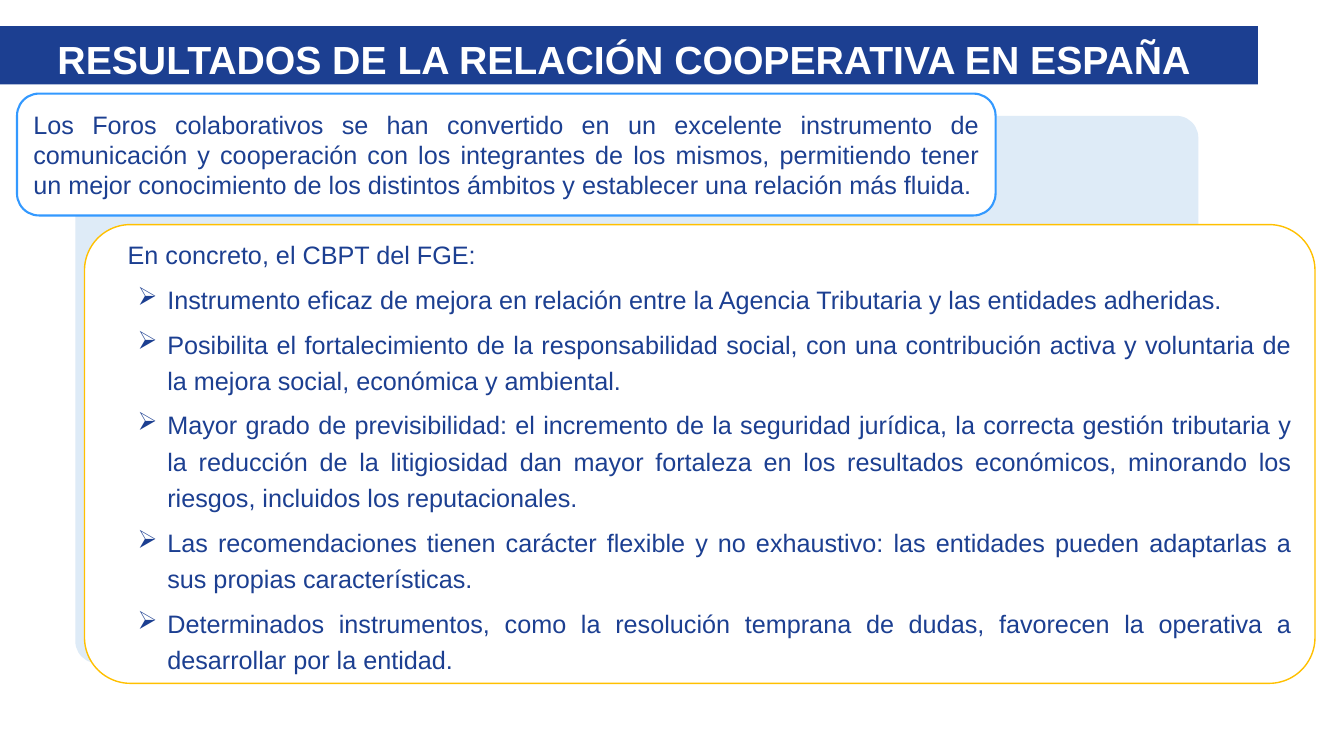
"""Build the slide on the results of the cooperative relationship in Spain."""
from dataclasses import dataclass
from typing import Any, Optional

import pptx
import pptx.dml.color
import pptx.enum.shapes
import pptx.enum.text
import pptx.util
from lxml import etree

Cm = pptx.util.Cm
Pt = pptx.util.Pt
RGBColor = pptx.dml.color.RGBColor
Align = pptx.enum.text.PP_ALIGN
Anchor = pptx.enum.text.MSO_ANCHOR

NAVY = RGBColor(0x1C, 0x3F, 0x91)
WHITE = RGBColor(0xFF, 0xFF, 0xFF)
PALE_BLUE = RGBColor(0xDE, 0xEB, 0xF7)
SKY_BLUE = RGBColor(0x33, 0x99, 0xFF)
AMBER = RGBColor(0xFF, 0xC0, 0x00)

DRAWING_NS = "http://schemas.openxmlformats.org/drawingml/2006/main"

TITLE = "RESULTADOS DE LA RELACIÓN COOPERATIVA EN ESPAÑA"
FORUMS = (
    "Los Foros colaborativos se han convertido en un excelente instrumento de "
    "comunicación y cooperación con los integrantes de los mismos, permitiendo tener "
    "un mejor conocimiento de los distintos ámbitos y establecer una relación más fluida."
)
INTRO = "En concreto, el CBPT del FGE:"
RESULTS = [
    "Instrumento eficaz de mejora en relación entre la Agencia Tributaria y las "
    "entidades adheridas.",
    "Posibilita el fortalecimiento de la responsabilidad social, con una contribución "
    "activa y voluntaria de la mejora social, económica y ambiental.",
    "Mayor grado de previsibilidad: el incremento de la seguridad jurídica, la correcta "
    "gestión tributaria y la reducción de la litigiosidad dan mayor fortaleza en los "
    "resultados económicos, minorando los riesgos, incluidos los reputacionales.",
    "Las recomendaciones tienen carácter flexible y no exhaustivo: las entidades pueden "
    "adaptarlas a sus propias características.",
    "Determinados instrumentos, como la resolución temprana de dudas, favorecen la "
    "operativa a desarrollar por la entidad.",
]


@dataclass
class Panel:
    """A rounded panel, with lengths in centimetres and line width in points."""

    left: float
    top: float
    width: float
    height: float
    radius: float
    fill: RGBColor
    line: Optional[RGBColor] = None
    line_width: float = 1


BACKDROP = Panel(1.9, 2.92, 28.3, 13.79, 0.04, PALE_BLUE)
RESULTS_PANEL = Panel(2.13, 5.66, 31.01, 11.56, 0.1, WHITE, AMBER)
TITLE_BAR = Panel(0, 0.66, 31.7, 1.47, 0, NAVY)
FORUMS_PANEL = Panel(0.43, 2.36, 24.66, 3.07, 0.18, WHITE, SKY_BLUE, 1.5)


def add_panel(s: Any, panel: Panel) -> Any:
    """Draw a panel and return its text frame."""
    sp = s.shapes.add_shape(
        pptx.enum.shapes.MSO_SHAPE.ROUNDED_RECTANGLE,
        Cm(panel.left), Cm(panel.top), Cm(panel.width), Cm(panel.height),
    )
    sp.adjustments[0] = panel.radius
    sp.shadow.inherit = False
    sp.fill.solid()
    sp.fill.fore_color.rgb = panel.fill
    if panel.line is None:
        sp.line.fill.background()
    else:
        sp.line.color.rgb = panel.line
        sp.line.width = Pt(panel.line_width)
    tf = sp.text_frame
    tf.word_wrap = True
    tf.vertical_anchor = Anchor.MIDDLE
    return tf


def add_text(
    tf: Any, text: str, *, size: float = 18, color: RGBColor = NAVY, bold: bool = False,
    align: Any = Align.JUSTIFY, spacing: float = 1, before: float = 0, after: float = 0,
    margin: float = 0, indent: float = 0, bullet: str = "",
) -> None:
    """Write one paragraph, filling the empty first one before adding more."""
    p = tf.paragraphs[0] if not tf.text else tf.add_paragraph()
    p.alignment = align
    p.line_spacing = spacing
    p.space_before = Pt(before)
    p.space_after = Pt(after)
    pPr = p._p.get_or_add_pPr()
    pPr.set("marL", str(Cm(margin)))
    pPr.set("indent", str(Cm(indent)))
    if bullet:
        etree.SubElement(pPr, f"{{{DRAWING_NS}}}buChar", char=bullet)
    r = p.add_run()
    r.text = text
    r.font.name = "Arial"
    r.font.size = Pt(size)
    r.font.bold = bold
    r.font.color.rgb = color


def main() -> None:
    """Build and save the presentation."""
    prs = pptx.Presentation()
    prs.slide_width = Cm(33.87)
    prs.slide_height = Cm(19.05)
    s = prs.slides.add_slide(prs.slide_layouts[6])

    add_panel(s, BACKDROP)

    tf = add_panel(s, RESULTS_PANEL)
    add_text(tf, INTRO, spacing=1.2, after=3, indent=0.5)
    for result in RESULTS:
        add_text(tf, result, spacing=1.2, before=3, after=3,
                 margin=1.5, indent=-0.75, bullet="➢")

    add_panel(s, TITLE_BAR)
    tf = s.shapes.add_textbox(Cm(1.2), Cm(0.89), Cm(30.5), Cm(0.74)).text_frame
    tf.word_wrap = True
    add_text(tf, TITLE, size=28, color=WHITE, bold=True, align=Align.LEFT, spacing=0.9)

    add_text(add_panel(s, FORUMS_PANEL), FORUMS)

    prs.save("out.pptx")


if __name__ == "__main__":
    main()
